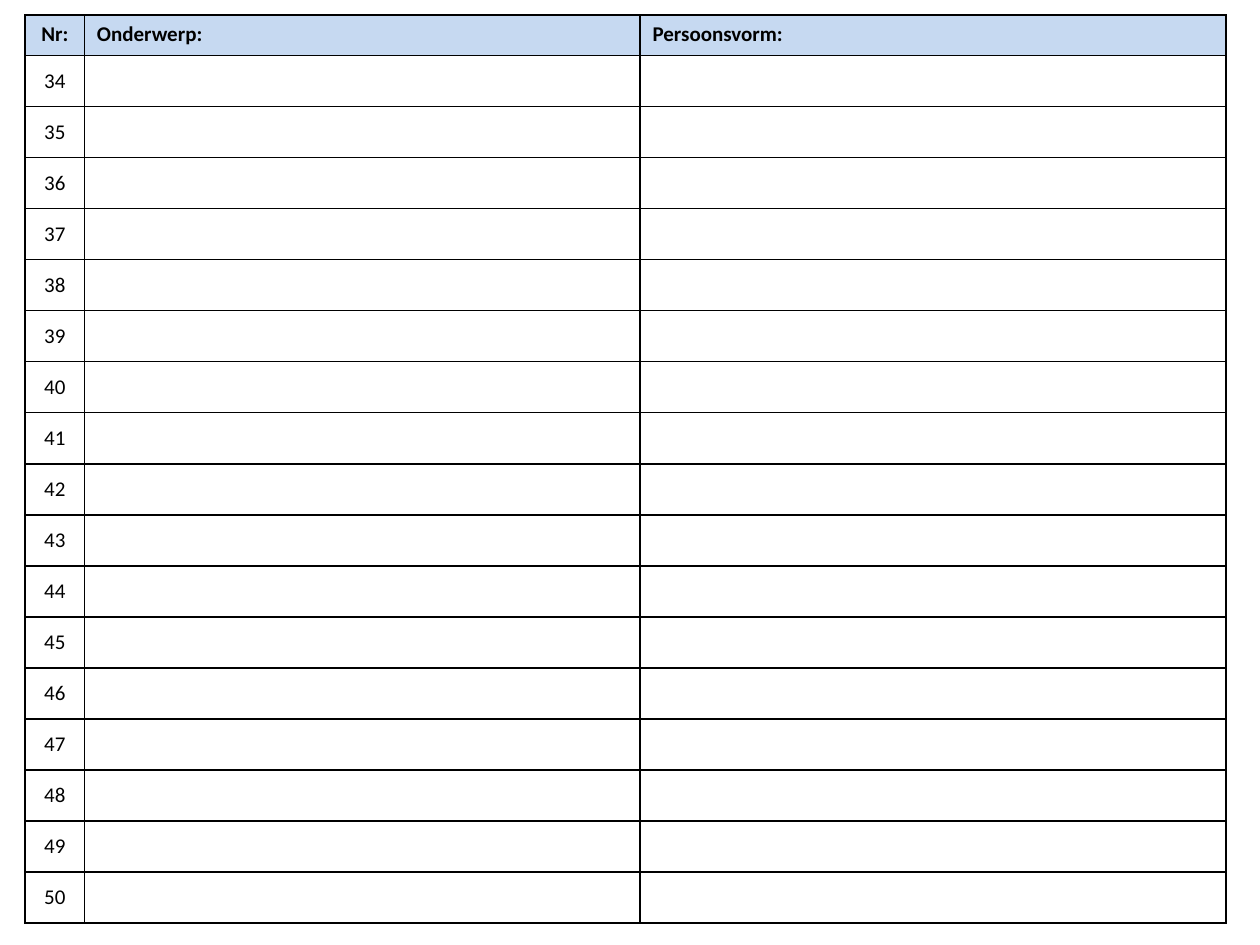
from lxml import etree
from pptx import Presentation
from pptx.dml.color import RGBColor
from pptx.enum.text import MSO_ANCHOR, PP_ALIGN
from pptx.oxml.ns import qn
from pptx.util import Inches, Pt

CENTER, LEFT = PP_ALIGN.CENTER, PP_ALIGN.LEFT
TOP, MIDDLE = MSO_ANCHOR.TOP, MSO_ANCHOR.MIDDLE
BLANK_LAYOUT = 6

COLORS = {"text": "000000", "border": "000000", "header": "C6D9F1"}
HEADINGS = ["Nr:", "Onderwerp:", "Persoonsvorm:"]
NUMBERS = range(34, 51)
COLUMN_WIDTHS = [0.47, 4.41, 4.65]
HEADER_HEIGHT = 0.32
TABLE_HEIGHT = 7.21


class Worksheet:
    font_name = "Calibri"
    font_size = Pt(12)
    border_width = Pt(1)

    def __init__(self, slide):
        self.slide = slide

    def add_table(self, left, top, widths, heights):
        table = self.slide.shapes.add_table(
            len(heights), len(widths), Inches(left), Inches(top),
            Inches(sum(widths)), Inches(sum(heights))).table
        table.first_row = False
        table.horz_banding = False
        for column, width in zip(table.columns, widths):
            column.width = Inches(width)
        for row, height in zip(table.rows, heights):
            row.height = Inches(height)
        return table

    def format_cell(self, cell, text, align=LEFT, anchor=MIDDLE, bold=False, fill=None):
        # Borders come before the fill in the cell properties
        properties = cell._tc.get_or_add_tcPr()
        for side in ("a:lnL", "a:lnR", "a:lnT", "a:lnB"):
            line = etree.SubElement(properties, qn(side), w=str(self.border_width))
            solid = etree.SubElement(line, qn("a:solidFill"))
            etree.SubElement(solid, qn("a:srgbClr"), val=COLORS["border"])
        if fill:
            cell.fill.solid()
            cell.fill.fore_color.rgb = RGBColor.from_string(fill)
        else:
            cell.fill.background()

        cell.vertical_anchor = anchor
        cell.text = text
        paragraph = cell.text_frame.paragraphs[0]
        paragraph.alignment = align
        font = paragraph.font
        font.name = self.font_name
        font.size = self.font_size
        font.bold = bold
        font.color.rgb = RGBColor.from_string(COLORS["text"])


def main():
    presentation = Presentation()
    presentation.slide_width = Inches(10)
    presentation.slide_height = Inches(7.5)
    slide = presentation.slides.add_slide(presentation.slide_layouts[BLANK_LAYOUT])
    worksheet = Worksheet(slide)

    # Answer grid: the numbered rows share the height below the header
    answer_height = (TABLE_HEIGHT - HEADER_HEIGHT) / len(NUMBERS)
    heights = [HEADER_HEIGHT] + [answer_height] * len(NUMBERS)
    answers = worksheet.add_table(0.2, 0.12, COLUMN_WIDTHS, heights)

    # Header row
    for column, heading in enumerate(HEADINGS):
        worksheet.format_cell(answers.cell(0, column), heading,
                              align=LEFT if column else CENTER, anchor=TOP,
                              bold=True, fill=COLORS["header"])

    # Numbered rows with room for the answers
    for row, number in enumerate(NUMBERS, start=1):
        worksheet.format_cell(answers.cell(row, 0), str(number), align=CENTER)
        for column in range(1, len(HEADINGS)):
            worksheet.format_cell(answers.cell(row, column), "")

    presentation.save("out.pptx")


if __name__ == "__main__":
    main()
